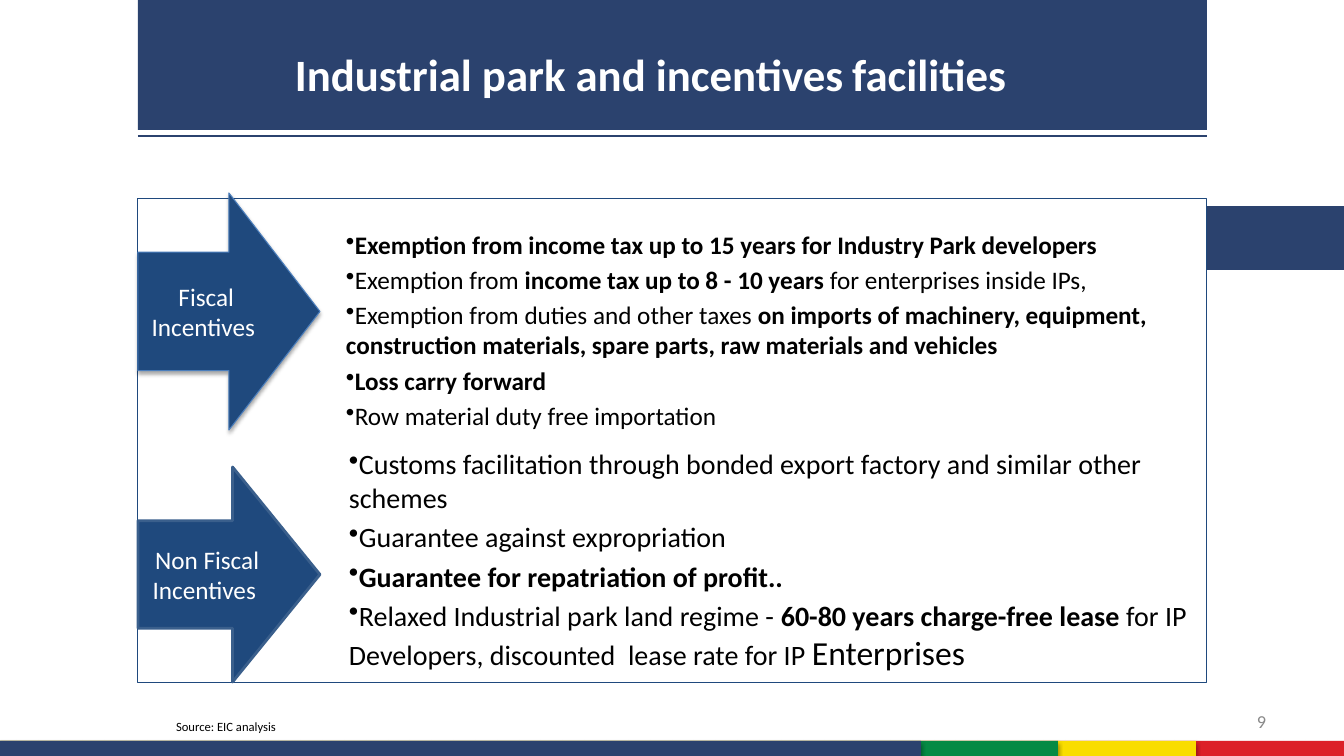
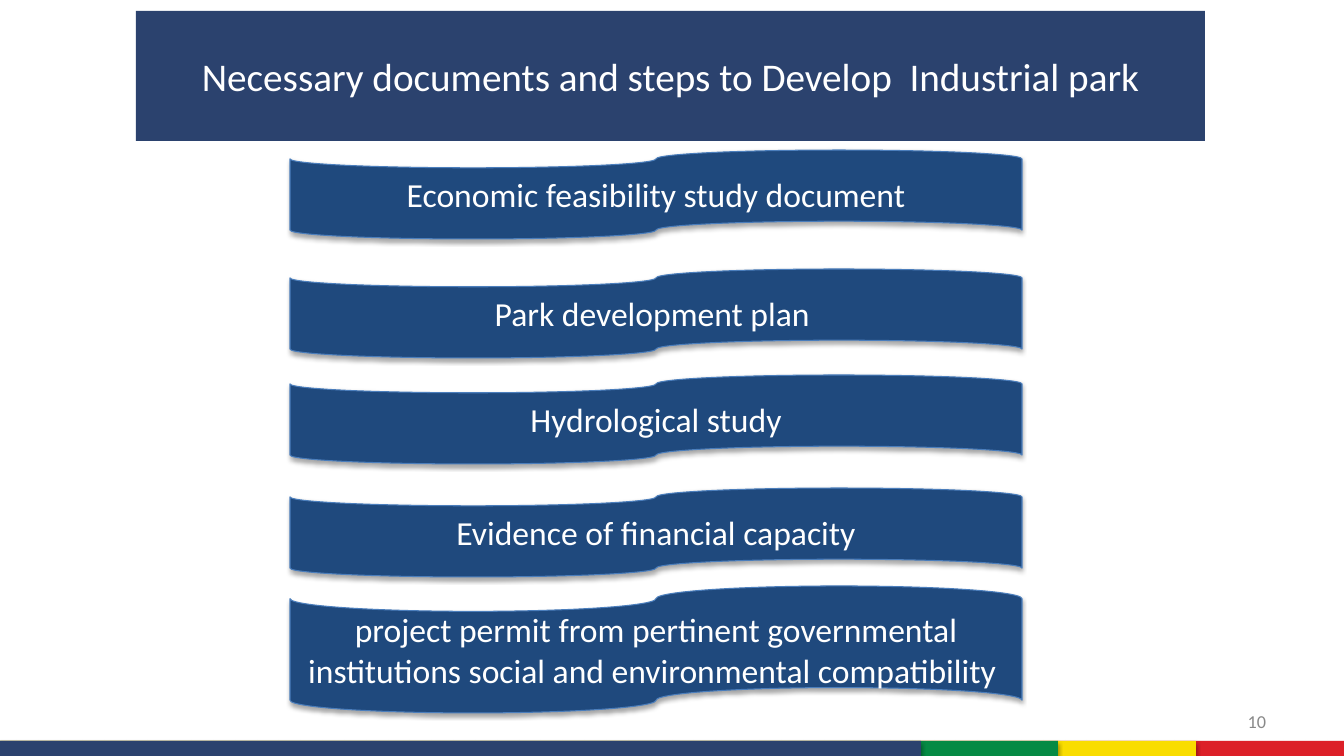
from lxml import etree
from pptx import Presentation
from pptx.dml.color import RGBColor
from pptx.enum.shapes import MSO_CONNECTOR, MSO_SHAPE
from pptx.enum.text import MSO_ANCHOR, PP_ALIGN
from pptx.oxml.ns import qn
from pptx.util import Emu, Pt

RECTANGLE = MSO_SHAPE.RECTANGLE
ARROW = MSO_SHAPE.RIGHT_ARROW
TAPE = MSO_SHAPE.FLOWCHART_PUNCHED_TAPE
STRAIGHT = MSO_CONNECTOR.STRAIGHT
TOP, MIDDLE, BOTTOM = MSO_ANCHOR.TOP, MSO_ANCHOR.MIDDLE, MSO_ANCHOR.BOTTOM
LEFT, CENTER, RIGHT = PP_ALIGN.LEFT, PP_ALIGN.CENTER, PP_ALIGN.RIGHT

NAVY = RGBColor(0x2B, 0x42, 0x6E)
BLUE = RGBColor(0x1F, 0x49, 0x7D)
EDGE = RGBColor(0x4B, 0x7E, 0xBC)
DARK_EDGE = RGBColor(0x3A, 0x5F, 0x8C)
GREEN = RGBColor(0x05, 0x8A, 0x44)
YELLOW = RGBColor(0xF9, 0xDD, 0x00)
RED = RGBColor(0xDC, 0x20, 0x28)
GRAY = RGBColor(0x89, 0x89, 0x89)
WHITE = RGBColor(0xFF, 0xFF, 0xFF)
BLACK = RGBColor(0x00, 0x00, 0x00)

FONT = "Calibri"
PX = 914400 / 100.8
SLIDE_WIDTH, SLIDE_HEIGHT = 1344, 756
BOLD = {"bold": True}


def add_box(slide, kind, bounds, fill=None, line=None, line_width=0.75, shadow=False):
    shape = slide.shapes.add_shape(kind, *[Emu(round(value * PX)) for value in bounds])
    if fill is None:
        shape.fill.background()
    else:
        shape.fill.solid()
        shape.fill.fore_color.rgb = fill
    if line is None:
        shape.line.fill.background()
    else:
        shape.line.color.rgb = line
        shape.line.width = Pt(line_width)
    shape.shadow.inherit = False
    if shadow:
        effects = shape._element.spPr.find(qn("a:effectLst"))
        outer = etree.SubElement(effects, qn("a:outerShdw"), blurRad="39370",
                                 dist="22860", dir="5400000", rotWithShape="0")
        color = etree.SubElement(outer, qn("a:srgbClr"), val="000000")
        etree.SubElement(color, qn("a:alpha"), val="35000")
    return shape


def add_text(shape, paragraphs, size, color, alignment=LEFT, anchor=MIDDLE,
             bullet=False, **frame_format):
    frame = shape.text_frame
    frame_format = {"word_wrap": True, "vertical_anchor": anchor, **frame_format}
    for name, value in frame_format.items():
        setattr(frame, name, value)
    for index, runs in enumerate(paragraphs):
        paragraph = frame.add_paragraph() if index else frame.paragraphs[0]
        paragraph.alignment = alignment
        if index:
            paragraph.space_before = Pt(size * 0.2)
        if bullet:
            properties = paragraph._p.get_or_add_pPr()
            etree.SubElement(properties, qn("a:buChar"), char="•")
        for text, changes in runs:
            run = paragraph.add_run()
            run.text = text
            font_format = {"name": FONT, "size": Pt(size), "bold": False, **changes}
            for name, value in font_format.items():
                setattr(run.font, name, value)
            run.font.color.rgb = color


presentation = Presentation()
presentation.slide_width = Emu(round(SLIDE_WIDTH * PX))
presentation.slide_height = Emu(round(SLIDE_HEIGHT * PX))
blank_layout = presentation.slide_layouts[6]

# Shared parts: footer stripes, title band and page number
FOOTER_TOP = 741
FOOTER_STRIPES = [(SLIDE_WIDTH, RED), (1196, YELLOW), (1058, GREEN), (921, NAVY)]
slides = []
for page, band_left, band_top in [("9", 138, 0), ("10", 136, 11)]:
    slide = presentation.slides.add_slide(blank_layout)
    for right, color in FOOTER_STRIPES:
        add_box(slide, RECTANGLE, (0, FOOTER_TOP, right, SLIDE_HEIGHT - FOOTER_TOP),
                color, shadow=True)
    band = add_box(slide, RECTANGLE, (band_left, band_top, 1069, 130), NAVY)
    number = slide.shapes.add_textbox(*[Emu(round(v * PX)) for v in (963, 701, 313, 40)])
    add_text(number, [[(page, {})]], 13, GRAY, RIGHT)
    slides.append((slide, band))

# Incentives: title, rule and frame
slide, band = slides[0]
title = slide.shapes.add_textbox(*[Emu(round(v * PX)) for v in (285, 11, 922, 126)])
add_text(title, [[("Industrial park and incentives", BOLD),
                  (" ", {"bold": True, "size": Pt(25)}),
                  ("facilities", BOLD)]], 32, WHITE)
rule = slide.shapes.add_connector(
    STRAIGHT, *[Emu(round(v * PX)) for v in (138, 136, 1207, 136)])
rule.line.color.rgb = NAVY
rule.line.width = Pt(2)
etree.SubElement(rule._element.spPr, qn("a:effectLst"))
add_box(slide, RECTANGLE, (1207, 206, SLIDE_WIDTH - 1207, 64), NAVY)
add_box(slide, RECTANGLE, (138, 199, 1069, 484), line=BLUE)

# Incentives: arrows
fiscal = add_box(slide, ARROW, (138, 193, 182, 237), BLUE, EDGE, shadow=True)
non_fiscal = add_box(slide, ARROW, (138, 467, 182, 215), BLUE, DARK_EDGE, 2)
non_fiscal.adjustments[1] = 0.48
for arrow, label in [(fiscal, "Fiscal Incentives "), (non_fiscal, "Non Fiscal Incentives ")]:
    add_text(arrow, [[(label, {})]], 18, WHITE, CENTER)

# Incentives: bullet lists
fiscal_points = [
    [("Exemption from income tax up to 15 years for Industry Park developers", BOLD)],
    [("Exemption from ", {}), ("income tax up to 8 - 10 years ", BOLD),
     ("for enterprises inside IPs,", {})],
    [("Exemption from duties and other taxes ", {}),
     ("on imports of machinery, equipment, construction materials, spare parts, "
      "raw materials and vehicles", BOLD)],
    [("Loss carry forward", BOLD)],
    [("Row material duty free importation", {})],
]
non_fiscal_points = [
    [("Customs facilitation through bonded export factory and similar other schemes", {})],
    [("Guarantee against expropriation", {})],
    [("Guarantee for repatriation of profit..", BOLD)],
    [("Relaxed Industrial park land regime - ", {}),
     ("60-80 years charge-free lease ", BOLD),
     ("for IP Developers, discounted  lease rate for IP ", {}),
     ("Enterprises", {"size": Pt(24)})],
]
for bounds, points, size in [((336, 224, 870, 218), fiscal_points, 18),
                             ((339, 442, 867, 241), non_fiscal_points, 20)]:
    box = slide.shapes.add_textbox(*[Emu(round(v * PX)) for v in bounds])
    add_text(box, points, size, BLACK, anchor=TOP, bullet=True)

# Incentives: source line
source = slide.shapes.add_textbox(*[Emu(round(v * PX)) for v in (176, 682, 914, 52)])
add_text(source, [[("Source: EIC analysis", {})]], 9, BLACK, anchor=BOTTOM,
         margin_left=0, margin_right=0, margin_top=0, margin_bottom=0)

# Documents and steps: title and tapes
slide, band = slides[1]
add_text(band, [[("Necessary documents and steps to Develop  Industrial park", {})]],
         28, WHITE, CENTER)
steps = [
    (150, 89, "Economic feasibility study document"),
    (269, 89, "Park development plan "),
    (375, 89, "Hydrological study"),
    (488, 89, "Evidence of financial capacity"),
    (586, 127, "project permit from pertinent governmental institutions "
               "social and environmental compatibility "),
]
for top, height, label in steps:
    tape = add_box(slide, TAPE, (290, top, 732, height), BLUE, EDGE, shadow=True)
    add_text(tape, [[(label, {})]], 24, WHITE, CENTER)

presentation.save("out.pptx")
